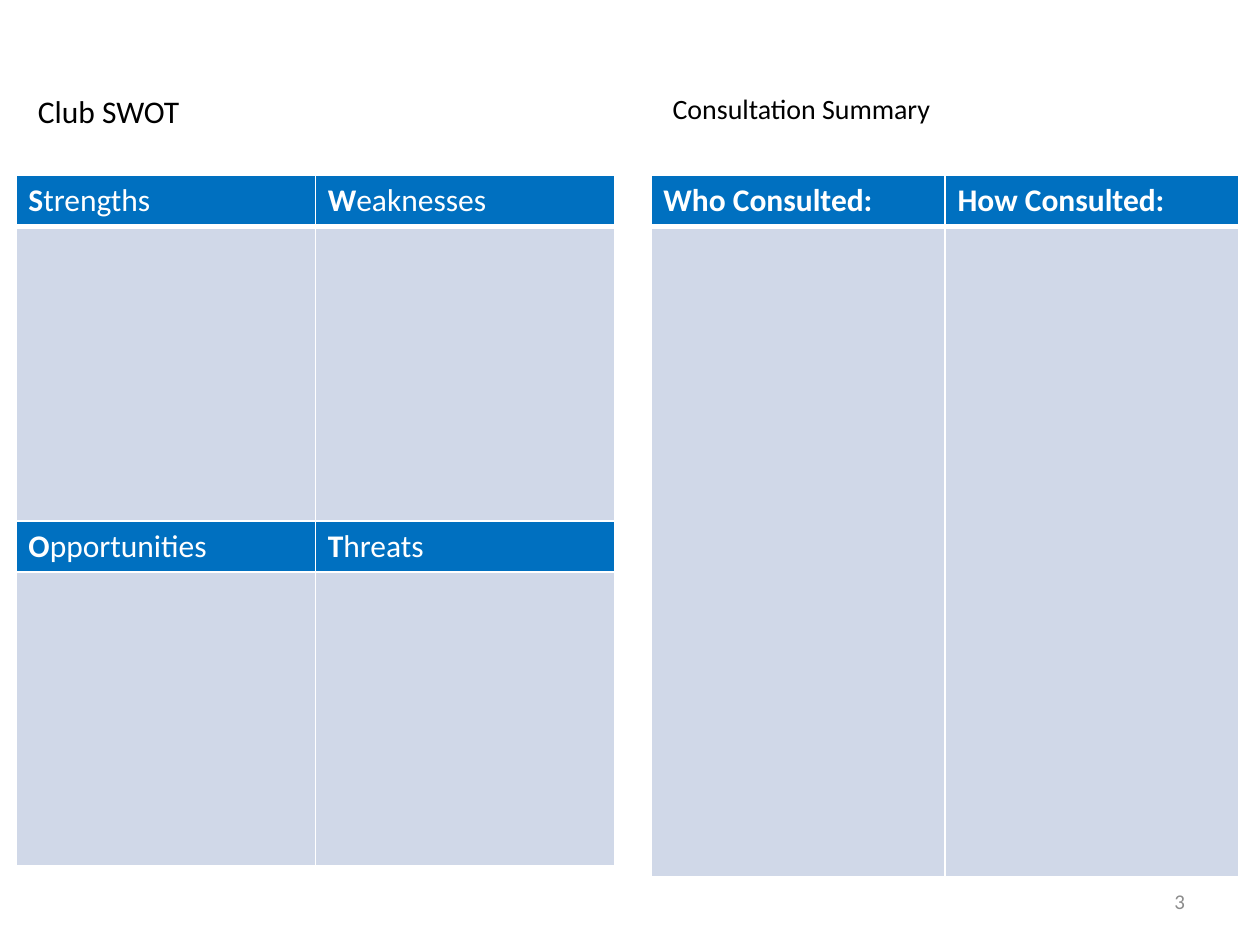
"""Build a slide with a club SWOT grid beside a consultation summary."""
from dataclasses import dataclass

from lxml import etree
from pptx import Presentation
from pptx.dml.color import RGBColor
from pptx.enum.text import MSO_ANCHOR, MSO_AUTO_SIZE, PP_ALIGN
from pptx.oxml.ns import qn
from pptx.util import Cm, Pt

LEFT, RIGHT = PP_ALIGN.LEFT, PP_ALIGN.RIGHT
TOP, MIDDLE = MSO_ANCHOR.TOP, MSO_ANCHOR.MIDDLE
NO_AUTOSIZE = MSO_AUTO_SIZE.NONE
TITLE_ONLY_LAYOUT = 5


@dataclass(frozen=True)
class Theme:
    font: str = "Calibri"
    header_fill: str = "0070C0"
    body_fill: str = "D0D8E8"
    border: str = "FFFFFF"
    header_text: str = "FFFFFF"
    text: str = "000000"
    muted: str = "8C8C8C"
    heading_size: int = 18
    subheading_size: int = 16
    number_size: int = 12
    thin_line: int = 1
    thick_line: int = 3


@dataclass(frozen=True)
class Box:
    left: float
    top: float
    width: float
    height: float

    def lengths(self):
        return [Cm(value) for value in (self.left, self.top, self.width, self.height)]


@dataclass(frozen=True)
class Label:
    text: str
    box: Box
    size: int
    color: str
    alignment: PP_ALIGN = LEFT
    anchor: MSO_ANCHOR = TOP
    wrap: bool = False


@dataclass(frozen=True)
class Grid:
    box: Box
    headers: list[tuple[str, str]]
    bold_letters: int | None
    header_height: float
    body_height: float


THEME = Theme()
TITLE = Label("Club SWOT", Box(0.51, 1.73, 3.4, 1.02), THEME.heading_size, THEME.text)
LABELS = [
    Label("Consultation Summary", Box(13.31, 1.73, 5.77, 0.94), THEME.subheading_size, THEME.text),
    Label("3", Box(18.21, 17.65, 5.93, 1.02), THEME.number_size, THEME.muted, RIGHT, MIDDLE, True),
]
GRIDS = [
    Grid(Box(0.32, 3.54, 12.07, 13.86),
         [("Strengths", "Weaknesses"), ("Opportunities", "Threats")], 1, 1, 5.93),
    Grid(Box(13.12, 3.54, 11.86, 14.1),
         [("Who Consulted:", "How Consulted:")], None, 1, 13.1),
]


def add_run(paragraph, text: str, size: int, color: str, bold: bool) -> None:
    run = paragraph.add_run()
    run.text = text
    for name, value in {"name": THEME.font, "size": Pt(size), "bold": bold}.items():
        setattr(run.font, name, value)
    run.font.color.rgb = RGBColor.from_string(color)


def write_label(shape, label: Label) -> None:
    shape.left, shape.top, shape.width, shape.height = label.box.lengths()
    frame = shape.text_frame
    settings = {"auto_size": NO_AUTOSIZE, "word_wrap": label.wrap, "vertical_anchor": label.anchor}
    for name, value in settings.items():
        setattr(frame, name, value)
    paragraph = frame.paragraphs[0]
    paragraph.alignment = label.alignment
    add_run(paragraph, label.text, label.size, label.color, False)


def set_borders(cell, widths: dict[str, int]) -> None:
    properties = cell._tc.get_or_add_tcPr()
    for index, (side, width) in enumerate(widths.items()):
        line = etree.Element(qn(f"a:ln{side}"), w=str(Pt(width)))
        fill = etree.SubElement(line, qn("a:solidFill"))
        etree.SubElement(fill, qn("a:srgbClr"), val=THEME.border)
        properties.insert(index, line)


def add_grid(slide, grid: Grid) -> None:
    row_count = 2 * len(grid.headers)
    table = slide.shapes.add_table(row_count, 2, *grid.box.lengths()).table
    table.first_row = table.horz_banding = False
    for column in table.columns:
        column.width = Cm(grid.box.width / 2)
    for row_index, row in enumerate(table.rows):
        is_header = row_index % 2 == 0
        row.height = Cm(grid.header_height if is_header else grid.body_height)
        widths = dict.fromkeys("LRTB", THEME.thin_line)
        if row_index < 2:
            widths["B" if is_header else "T"] = THEME.thick_line
        for column_index, cell in enumerate(row.cells):
            cell.fill.solid()
            color = THEME.header_fill if is_header else THEME.body_fill
            cell.fill.fore_color.rgb = RGBColor.from_string(color)
            set_borders(cell, widths)
            if is_header:
                text = grid.headers[row_index // 2][column_index]
                split = grid.bold_letters or len(text)
                paragraph = cell.text_frame.paragraphs[0]
                for part, bold in ((text[:split], True), (text[split:], False)):
                    if part:
                        add_run(paragraph, part, THEME.heading_size, THEME.header_text, bold)


def main() -> None:
    presentation = Presentation()
    presentation.slide_width, presentation.slide_height = Cm(25.4), Cm(19.05)
    slide = presentation.slides.add_slide(presentation.slide_layouts[TITLE_ONLY_LAYOUT])
    for grid in GRIDS:
        add_grid(slide, grid)
    write_label(slide.shapes.title, TITLE)
    for label in LABELS:
        write_label(slide.shapes.add_textbox(*label.box.lengths()), label)
    presentation.save("out.pptx")


if __name__ == "__main__":
    main()
